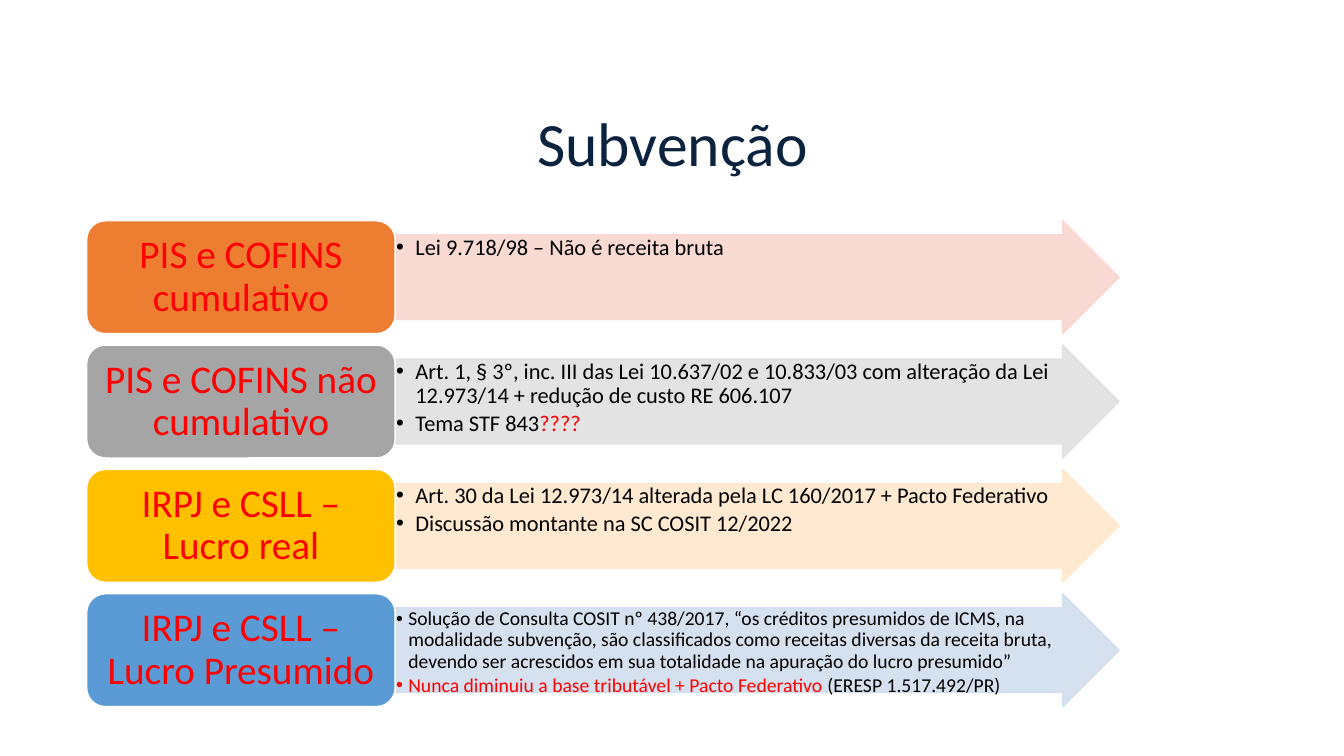
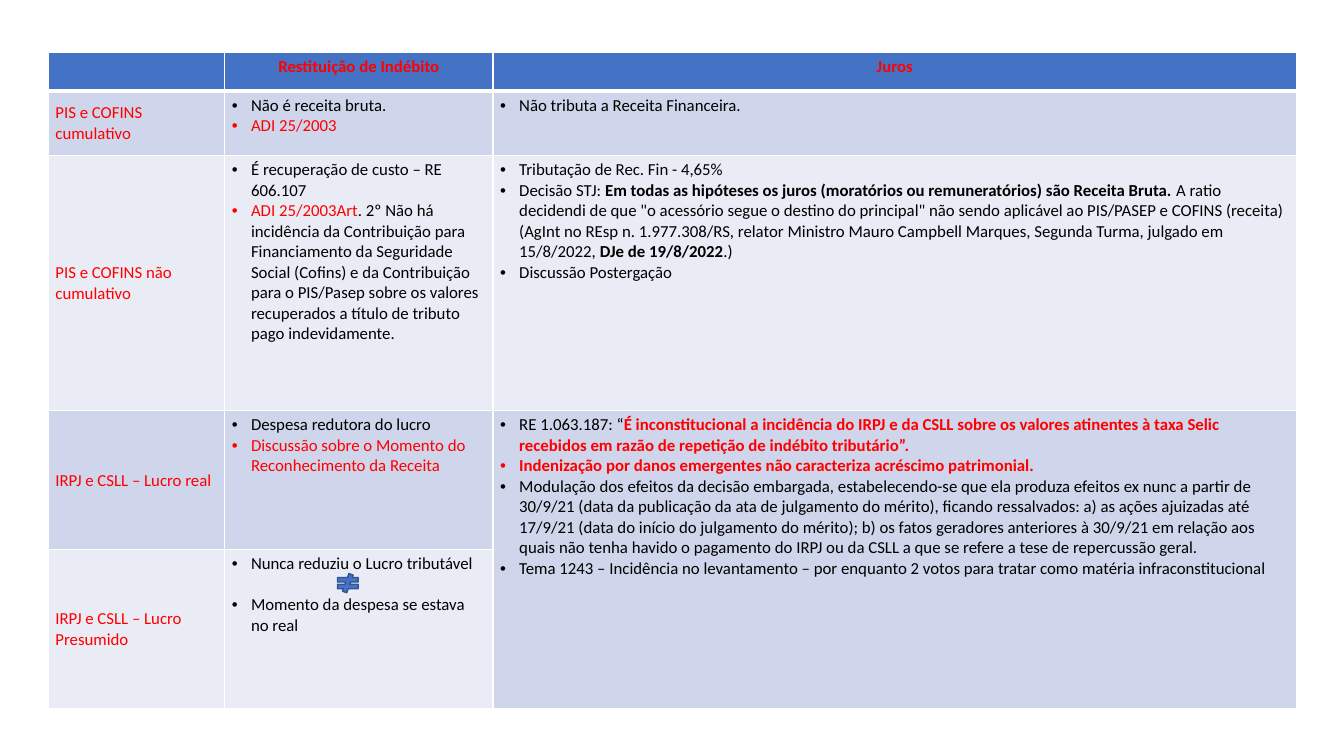
from collections import namedtuple

from lxml.etree import SubElement
from pptx import Presentation
from pptx.dml.color import RGBColor
from pptx.enum.shapes import MSO_SHAPE
from pptx.enum.text import MSO_ANCHOR, MSO_AUTO_SIZE, PP_ALIGN
from pptx.oxml.ns import qn
from pptx.util import Inches, Pt

FONT = "Calibri"
COLORS = {
    "title": "0B233F", "text": "000000", "alert": "FF0000", "white": "FFFFFF",
    "orange": "ED7D31", "orange_light": "F8D7CE",
    "gray": "A5A5A5", "gray_light": "E1E1E1",
    "gold": "FFC000", "gold_light": "FFE8CC",
    "blue": "5B9BD5", "blue_light": "D2DEEF",
    "header": "4472C4", "band_dark": "CFD5EA", "band_light": "E9EBF5",
    "symbol_line": "325491",
}
REGIMES = ["PIS e COFINS cumulativo", "PIS e COFINS não cumulativo",
           "IRPJ e CSLL – Lucro real", "IRPJ e CSLL – Lucro Presumido"]

Run = namedtuple("Run", "text color bold", defaults=("text", False))


def red(text, bold=False):
    """Return a run in the alert colour."""
    return Run(text, "alert", bold)


def strong(text):
    """Return a bold run in the text colour."""
    return Run(text, bold=True)


SUBSIDY_ROWS = [
    ("orange", 16, 0.19, [[Run("Lei 9.718/98 – Não é receita bruta")]]),
    ("gray", 16, 0.19, [
        [Run("Art. 1, § 3º, inc. III das Lei 10.637/02 e 10.833/03 com alteração "
             "da Lei 12.973/14 + redução de custo RE 606.107")],
        [Run("Tema STF 843"), red("????")]]),
    ("gold", 16, 0.19, [
        [Run("Art. 30 da Lei 12.973/14 alterada pela LC 160/2017 + Pacto Federativo")],
        [Run("Discussão montante na SC COSIT 12/2022")]]),
    ("blue", 14, 0.12, [
        [Run("Solução de Consulta COSIT nº 438/2017, “os créditos presumidos de "
             "ICMS, na modalidade subvenção, são classificados como receitas "
             "diversas da receita bruta, devendo ser acrescidos em sua totalidade "
             "na apuração do lucro presumido”")],
        [red("Nunca diminuiu a base tributável + Pacto Federativo "),
         Run("(ERESP 1.517.492/PR)")]]),
]

REFUND_HEADERS = ["", "Restituição de Indébito", "Juros"]
REFUND_COLUMNS = [1.75, 2.66, 7.97]
REFUND_HEIGHTS = [0.37, 0.64, 2.53, 1.38, 1.58]
REFUND_ROWS = [
    ([[Run("Não é receita bruta.")], [red("ADI 25/2003")]],
     [[Run("Não tributa a Receita Financeira.")]]),
    ([[Run("É recuperação de custo – RE 606.107")],
      [red("ADI 25/2003Art"),
       Run(". 2º Não há incidência da Contribuição para Financiamento da "
           "Seguridade Social (Cofins) e da Contribuição para o PIS/Pasep sobre "
           "os valores recuperados a título de tributo pago indevidamente.")]],
     [[Run("Tributação de Rec. Fin - 4,65%")],
      [Run("Decisão STJ: "),
       strong("Em todas as hipóteses os juros (moratórios ou remuneratórios) "
              "são Receita Bruta."),
       Run(" A ratio decidendi de que \"o acessório segue o destino do "
           "principal\" não sendo aplicável ao PIS/PASEP e COFINS (receita) "
           "(AgInt no REsp n. 1.977.308/RS, relator Ministro Mauro Campbell "
           "Marques, Segunda Turma, julgado em 15/8/2022, "),
       strong("DJe de 19/8/2022"), Run(".)")],
      [Run("Discussão Postergação")]]),
    ([[Run("Despesa redutora do lucro")],
      [red("Discussão sobre o Momento do Reconhecimento da Receita")]],
     [[Run("RE 1.063.187: “"),
       red("É inconstitucional a incidência do IRPJ e da CSLL sobre os valores "
           "atinentes à taxa Selic recebidos em razão de repetição de indébito "
           "tributário”.", True)],
      [red("Indenização por danos emergentes não caracteriza acréscimo "
           "patrimonial.", True)],
      [Run("Modulação dos efeitos da decisão embargada, estabelecendo-se que ela "
           "produza efeitos ex nunc a partir de 30/9/21 (data da publicação da "
           "ata de julgamento do mérito), ficando ressalvados: a) as ações "
           "ajuizadas até 17/9/21 (data do início do julgamento do mérito); b) os "
           "fatos geradores anteriores à 30/9/21 em relação aos quais não tenha "
           "havido o pagamento do IRPJ ou da CSLL a que se refere a tese de "
           "repercussão geral.")],
      [Run("Tema 1243 – Incidência no levantamento – por enquanto 2 votos para "
           "tratar como matéria infraconstitucional")]]),
    ([[Run("Nunca reduziu o Lucro tributável")],
      [Run("Momento da despesa se estava no real")]], []),
]


def rgb(name):
    """Look up a named colour."""
    return RGBColor.from_string(COLORS[name])


def add_bullet(paragraph, indent):
    """Give a paragraph a hanging bullet."""
    properties = paragraph._p.get_or_add_pPr()
    properties.set("marL", str(Inches(indent)))
    properties.set("indent", str(-Inches(indent)))
    SubElement(properties, qn("a:buFont"), typeface="Arial")
    SubElement(properties, qn("a:buChar"), char="•")


def write_text(frame, paragraphs, size, align=PP_ALIGN.LEFT, indent=None,
               line_spacing=1.0, after=0):
    """Fill a text frame with paragraphs made of runs."""
    frame.word_wrap = True
    for index, runs in enumerate(paragraphs):
        paragraph = frame.add_paragraph() if index else frame.paragraphs[0]
        if indent:
            add_bullet(paragraph, indent)
        paragraph.alignment = align
        paragraph.line_spacing = line_spacing
        paragraph.space_after = Pt(after)
        paragraph.font.name = FONT
        paragraph.font.size = Pt(size)
        for part in runs:
            run = paragraph.add_run()
            run.text = part.text
            run.font.color.rgb = rgb(part.color)
            run.font.bold = part.bold


def set_margins(holder, horizontal, vertical):
    """Set the inner margins of a text frame or table cell."""
    holder.margin_left = holder.margin_right = Inches(horizontal)
    holder.margin_top = holder.margin_bottom = Inches(vertical)


def add_block(slide, preset, box, fill, line, opacity=None):
    """Add a filled and outlined preset shape."""
    block = slide.shapes.add_shape(preset, *map(Inches, box))
    block.shadow.inherit = False
    block.fill.solid()
    block.fill.fore_color.rgb = rgb(fill)
    block.line.color.rgb = rgb(line)
    block.line.width = Pt(1)
    if opacity:
        for color in block._element.spPr.iter(qn("a:srgbClr")):
            SubElement(color, qn("a:alpha"), val=str(opacity * 1000))
    return block


def add_title(slide, text):
    """Place and format the slide title."""
    title = slide.shapes.title
    title.left, title.top, title.width, title.height = map(
        Inches, (0.92, 0.73, 11.5, 1.45))
    title.text_frame.auto_size = MSO_AUTO_SIZE.NONE
    title.text_frame.vertical_anchor = MSO_ANCHOR.MIDDLE
    write_text(title.text_frame, [[Run(text, "title")]], 44, PP_ALIGN.CENTER,
               line_spacing=0.9)


def add_regime_row(slide, top, regime, color, size, indent, points):
    """Add a regime label with its arrow of bullet points."""
    light = f"{color}_light"
    arrow = add_block(slide, MSO_SHAPE.RIGHT_ARROW, (3.92, top, 7.18, 1.12),
                      light, light, opacity=90)
    arrow.adjustments[0], arrow.adjustments[1] = 0.75, 0.5
    arrow.text_frame.vertical_anchor = MSO_ANCHOR.TOP
    set_margins(arrow.text_frame, 0.01, 0.01)
    write_text(arrow.text_frame, points, size, indent=indent,
               line_spacing=0.9, after=size * 0.15)

    label = add_block(slide, MSO_SHAPE.ROUNDED_RECTANGLE,
                      (0.86, top, 3.06, 1.12), color, "white")
    label.text_frame.vertical_anchor = MSO_ANCHOR.MIDDLE
    set_margins(label.text_frame, 0.12, 0.06)
    write_text(label.text_frame, [[red(regime)]], 28, PP_ALIGN.CENTER,
               line_spacing=0.9)


def format_cell(cell, fill, top=1, bottom=1):
    """Give a table cell its margins, white borders and fill."""
    set_margins(cell, 0.07, 0.04)
    properties = cell._tc.get_or_add_tcPr()
    for side, width in (("L", 1), ("R", 1), ("T", top), ("B", bottom)):
        border = SubElement(properties, qn(f"a:ln{side}"), w=str(Pt(width)))
        solid = SubElement(border, qn("a:solidFill"))
        SubElement(solid, qn("a:srgbClr"), val=COLORS["white"])
    cell.fill.solid()
    cell.fill.fore_color.rgb = rgb(fill)


def add_refund_table(slide):
    """Add the table of refunds and interest by tax regime."""
    table = slide.shapes.add_table(
        len(REFUND_HEIGHTS), len(REFUND_COLUMNS), Inches(0.48), Inches(0.52),
        Inches(sum(REFUND_COLUMNS)), Inches(sum(REFUND_HEIGHTS))).table
    for column, width in zip(table.columns, REFUND_COLUMNS):
        column.width = Inches(width)
    for row, height in zip(table.rows, REFUND_HEIGHTS):
        row.height = Inches(height)

    for column, header in enumerate(REFUND_HEADERS):
        cell = table.cell(0, column)
        format_cell(cell, "header", bottom=3)
        if header:
            write_text(cell.text_frame, [[red(header, True)]], 12, PP_ALIGN.CENTER)

    for row, (regime, details) in enumerate(zip(REGIMES, REFUND_ROWS), 1):
        contents = ([[red(regime)]], *details)
        for column, paragraphs in enumerate(contents):
            cell = table.cell(row, column)
            format_cell(cell, "band_dark" if row % 2 else "band_light",
                        top=3 if row == 1 else 1)
            write_text(cell.text_frame, paragraphs, 12,
                       indent=0.19 if column else None)
        table.cell(row, 0).vertical_anchor = MSO_ANCHOR.MIDDLE
    table.cell(3, 2).merge(table.cell(4, 2))
    table.cell(4, 1).text_frame.paragraphs[1].space_before = Pt(14.6)


def build_subsidy_slide(deck):
    """Build the slide on subsidies."""
    slide = deck.slides.add_slide(deck.slide_layouts[5])
    add_title(slide, "Subvenção")
    pitch = 3.7 / 3
    for index, (regime, row) in enumerate(zip(REGIMES, SUBSIDY_ROWS)):
        add_regime_row(slide, 2.19 + index * pitch, regime, *row)


def build_refund_slide(deck):
    """Build the slide on refunds and interest."""
    slide = deck.slides.add_slide(deck.slide_layouts[6])
    add_refund_table(slide)
    add_block(slide, MSO_SHAPE.MATH_NOT_EQUAL, (3.31, 5.69, 0.28, 0.19),
              "header", "symbol_line")


def main():
    """Build and save the deck."""
    deck = Presentation()
    deck.slide_width, deck.slide_height = Inches(13.33), Inches(7.5)
    build_subsidy_slide(deck)
    build_refund_slide(deck)
    deck.save("out.pptx")


if __name__ == "__main__":
    main()
